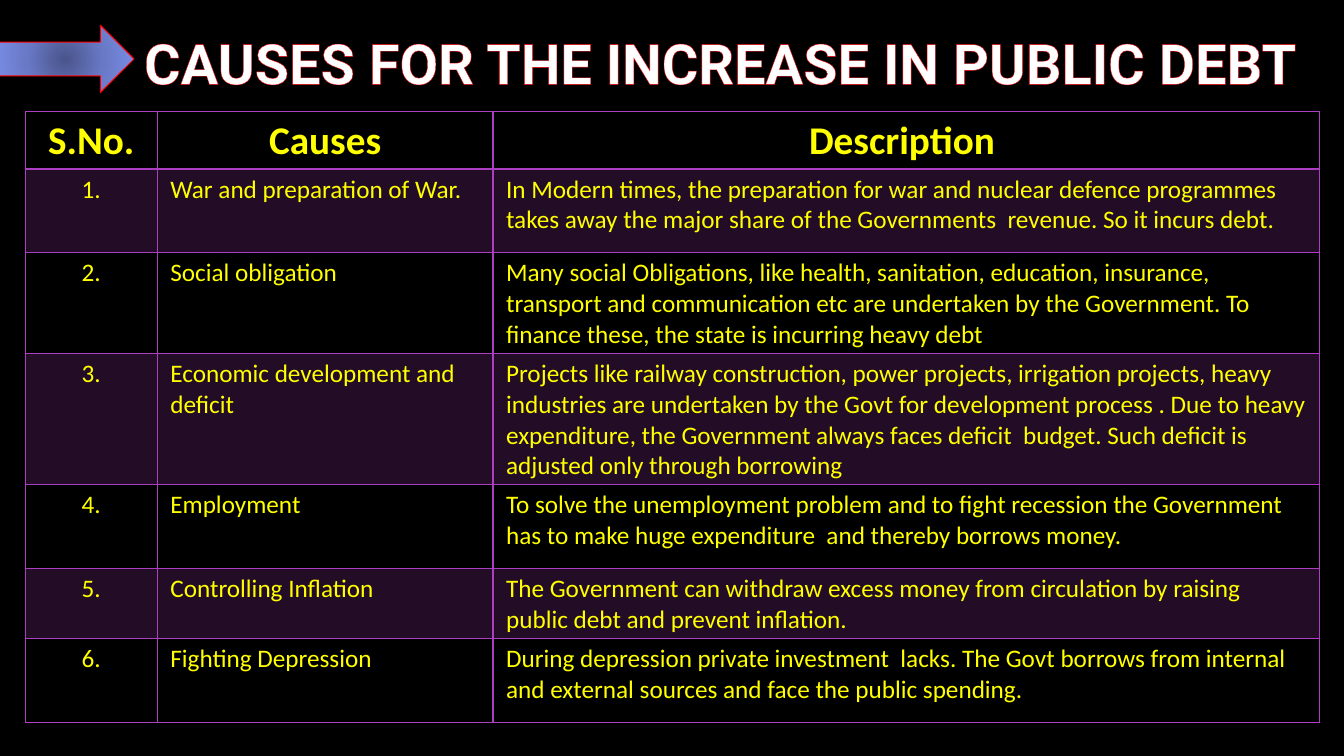
"""Build the slide on the causes for the increase in public debt."""
import pptx
import pptx.dml.color
import pptx.enum.shapes
import pptx.enum.text
import pptx.oxml
import pptx.oxml.ns
import pptx.util

RGBColor = pptx.dml.color.RGBColor
Inches, Pt = pptx.util.Inches, pptx.util.Pt
PP_ALIGN, ANCHOR = pptx.enum.text.PP_ALIGN, pptx.enum.text.MSO_ANCHOR

BLACK = RGBColor(0x00, 0x00, 0x00)
WHITE = RGBColor(0xFF, 0xFF, 0xFF)
RED = RGBColor(0xFF, 0x00, 0x00)
YELLOW = RGBColor(0xFF, 0xFF, 0x00)
PURPLE = RGBColor(0xAC, 0x3E, 0xC1)
ARROW_STOPS = [
    (0, RGBColor(0x4A, 0x55, 0x8B)),
    (50, RGBColor(0x69, 0x79, 0xC6)),
    (100, RGBColor(0x7C, 0x90, 0xEB)),
]

TITLE = "CAUSES FOR THE INCREASE IN PUBLIC DEBT"
HEADINGS = ("S.No.", "Causes", "Description ")
CAUSES = [
    ("War and preparation of War.",
     "In Modern times, the preparation for war and nuclear defence programmes takes away "
     "the major share of the Governments  revenue. So it incurs debt."),
    ("Social obligation",
     "Many social Obligations, like health, sanitation, education, insurance, transport and "
     "communication etc are undertaken by the Government. To finance these, the state is "
     "incurring heavy debt"),
    ("Economic development and deficit",
     "Projects like railway construction, power projects, irrigation projects, heavy "
     "industries are undertaken by the Govt for development process . Due to heavy "
     "expenditure, the Government always faces deficit  budget. Such deficit is adjusted "
     "only through borrowing"),
    ("Employment",
     "To solve the unemployment problem and to fight recession the Government has to make "
     "huge expenditure  and thereby borrows money."),
    ("Controlling Inflation",
     "The Government can withdraw excess money from circulation by raising public debt and "
     "prevent inflation."),
    ("Fighting Depression",
     "During depression private investment  lacks. The Govt borrows from internal and "
     "external sources and face the public spending."),
]
COLUMN_WIDTHS = (1.31, 3.33, 8.2)
ROW_HEIGHTS = (0.42, 0.83, 0.83, 1, 0.83, 0.59, 0.83)


def element(tag, attributes="", content=""):
    return pptx.oxml.parse_xml(
        f'<a:{tag} {pptx.oxml.ns.nsdecls("a")} {attributes}>{content}</a:{tag}>')


def solid(color):
    return f'<a:solidFill><a:srgbClr val="{color}"/></a:solidFill>'


def style(paragraph, font_name, size, color, bold):
    for run in paragraph.runs:
        run.font.name, run.font.size, run.font.bold = font_name, Pt(size), bold
        run.font.color.rgb = color


def add_title(slide):
    title = slide.shapes.add_textbox(Inches(1.33), Inches(-0.18), Inches(12.16), Inches(1.59))
    frame = title.text_frame
    frame.word_wrap = True
    frame.vertical_anchor = ANCHOR.MIDDLE
    frame.text = TITLE
    heading = frame.paragraphs[0]
    style(heading, "Roboto", 40, WHITE, True)
    outline = element("ln", f'w="{Pt(0.25)}"', solid(RED))
    heading.runs[0].font._element.insert(0, outline)


def add_arrow(slide):
    arrow = slide.shapes.add_shape(
        pptx.enum.shapes.MSO_SHAPE.RIGHT_ARROW,
        Inches(-0.04), Inches(0.25), Inches(1.37), Inches(0.67))
    arrow.line.color.rgb = RED
    arrow.line.width = Pt(0.75)
    stops = "".join(f'<a:gs pos="{share * 1000}"><a:srgbClr val="{color}"/></a:gs>'
                    for share, color in ARROW_STOPS)
    center = '<a:fillToRect l="50000" t="50000" r="50000" b="50000"/>'
    properties = arrow._element.spPr
    properties.insert(2, element(
        "gradFill", 'rotWithShape="1"',
        f'<a:gsLst>{stops}</a:gsLst><a:path path="circle">{center}</a:path>'))
    properties.append(element(
        "effectLst", "",
        f'<a:outerShdw blurRad="{Pt(5)}" dist="{Pt(3)}" dir="5400000" rotWithShape="0">'
        f'<a:srgbClr val="{BLACK}"><a:alpha val="65000"/></a:srgbClr></a:outerShdw>'))


def format_cell(cell, row, column):
    is_header = row == 0
    cell.margin_left = cell.margin_right = Inches(0.13)
    cell.margin_top = cell.margin_bottom = Inches(0.05)
    paragraph = cell.text_frame.paragraphs[0]
    centred = is_header or column == 0
    paragraph.alignment = PP_ALIGN.CENTER if centred else PP_ALIGN.LEFT
    style(paragraph, "Calibri", 28 if is_header else 18, YELLOW, is_header)
    properties = cell._tc.get_or_add_tcPr()
    if row % 2:
        cell.fill.solid()
        cell.fill.fore_color.rgb = PURPLE
        properties[0][0].append(element("alpha", 'val="20000"'))
    else:
        cell.fill.background()
    widths = {"lnL": 1, "lnR": 1, "lnT": 2 if row == 1 else 1, "lnB": 2 if is_header else 1}
    for place, (side, width) in enumerate(widths.items()):
        properties.insert(place, element(side, f'w="{Pt(width)}"', solid(PURPLE)))


def add_causes_table(slide):
    rows = [HEADINGS] + [(f"{number}.", *cause) for number, cause in enumerate(CAUSES, 1)]
    table = slide.shapes.add_table(
        len(rows), len(HEADINGS), Inches(0.25), Inches(1.11),
        Inches(sum(COLUMN_WIDTHS)), Inches(sum(ROW_HEIGHTS))).table
    for column, width in zip(table.columns, COLUMN_WIDTHS):
        column.width = Inches(width)
    for table_row, height in zip(table.rows, ROW_HEIGHTS):
        table_row.height = Inches(height)
    for row, texts in enumerate(rows):
        for column, text in enumerate(texts):
            cell = table.cell(row, column)
            cell.text_frame.text = text
            format_cell(cell, row, column)


def main():
    deck = pptx.Presentation()
    deck.slide_width, deck.slide_height = Inches(13.33), Inches(7.5)
    slide = deck.slides.add_slide(deck.slide_layouts[6])
    slide.background.fill.solid()
    slide.background.fill.fore_color.rgb = BLACK
    add_title(slide)
    add_causes_table(slide)
    add_arrow(slide)
    deck.save("out.pptx")


if __name__ == "__main__":
    main()
